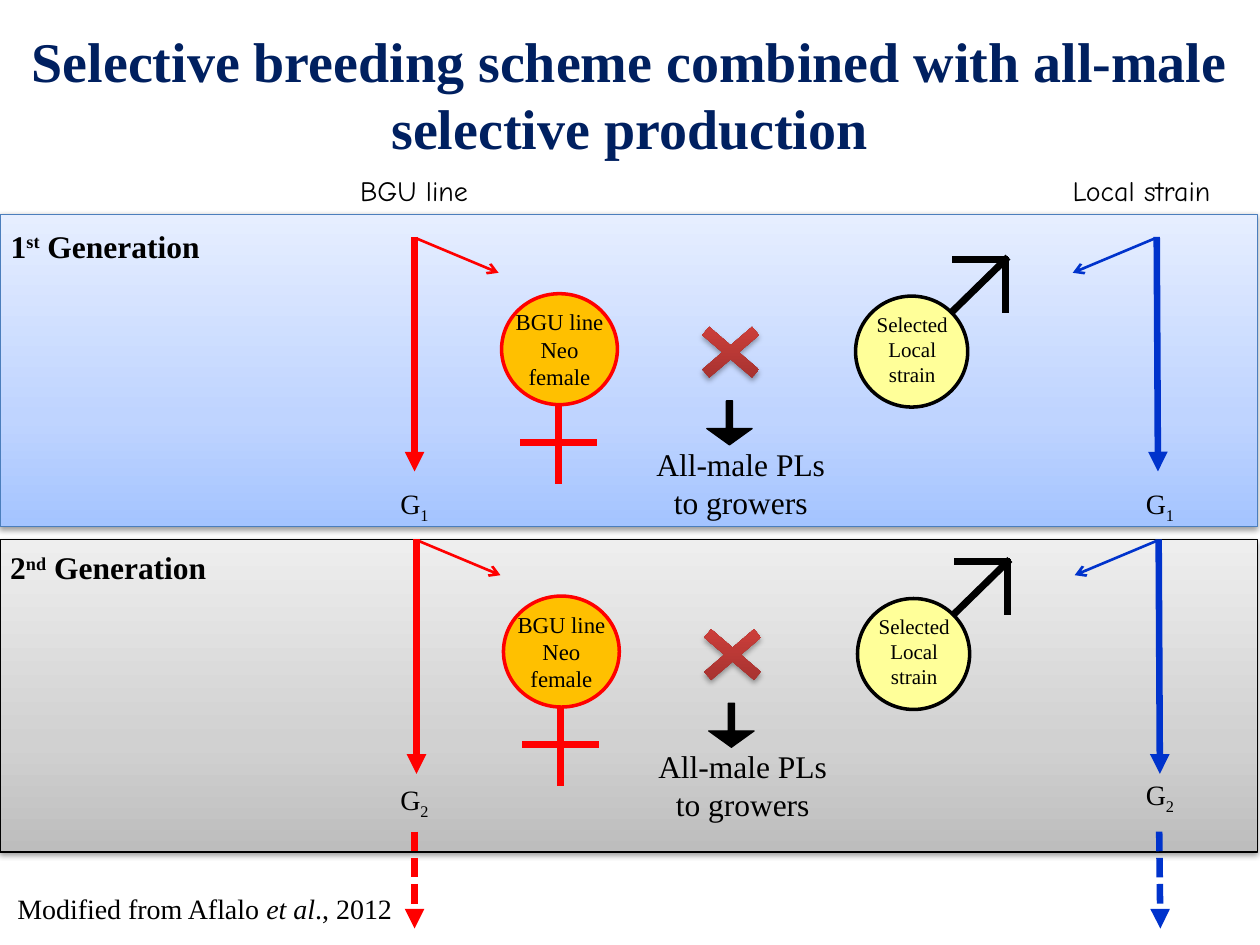
from dataclasses import dataclass
from pptx import Presentation, oxml
from pptx import util as u
from pptx.dml.color import RGBColor
from pptx.enum import dml, shapes, text
from pptx.oxml import ns


@dataclass(frozen=True)
class Theme:
    navy: str = "002060"
    black: str = "000000"
    red: str = "FF0000"
    blue: str = "0033CC"
    orange: str = "FFC000"
    yellow: str = "FFFF99"
    panel_line: str = "4B7EBC"
    blue_panel: tuple = ((0, "A4C4FF"), (35, "BFD4FF"), (100, "E6EEFF"))
    grey_panel: tuple = ((0, "BDBDBD"), (35, "D1D1D1"), (100, "EEEEEE"))
    cross: tuple = ((0, "9C2F2D"), (80, "CB3E3A"), (100, "CE3B37"))
    serif: str = "Times New Roman"
    casual: str = "Comic Neue"
    title: int = 32
    heading: int = 18
    body: int = 16
    female: int = 13
    male: int = 12
    thin: float = 0.75
    branch: float = 1.5
    outline: float = 2
    arrow: float = 3.75
    symbol: float = 4


THEME = Theme()
SHAPE = shapes.MSO_SHAPE


def points(values):
    return [u.Pt(value) for value in values]


def write(frame, lines, size, font=THEME.serif, color=THEME.black, bold=False):
    """Fill a frame with lines; a line is a string or a list of (text, style) runs."""
    for index, line in enumerate(lines):
        paragraph = frame.add_paragraph() if index else frame.paragraphs[0]
        paragraph.alignment = text.PP_ALIGN.CENTER
        for content, style in [(line, None)] if isinstance(line, str) else line:
            run = paragraph.add_run()
            run.text = content
            run.font.size, run.font.name, run.font.bold = u.Pt(size), font, bold
            run.font.color.rgb = RGBColor.from_string(color)
            if style == "italic":
                run.font.italic = True
            elif style:
                run.font._element.set("baseline", str(style * 1000))


def add_text(parent, box, lines, size=THEME.body, wrap=False, **format):
    frame = parent.add_textbox(*points(box)).text_frame
    frame.word_wrap = wrap
    write(frame, lines, size, **format)


def add_shape(parent, kind, box, fill, line=None, width=THEME.thin, shadow=None, adjustments=()):
    """Add a preset shape; fill is one colour or a tuple of gradient stops."""
    shape = parent.add_shape(kind, *points(box))
    for index, value in enumerate(adjustments):
        shape.adjustments[index] = value
    if isinstance(fill, str):
        shape.fill.solid()
        shape.fill.fore_color.rgb = RGBColor.from_string(fill)
    else:
        shape.fill.gradient()
        shape.fill.gradient_angle = 90
        stops = shape._element.spPr.find(".//" + ns.qn("a:gsLst"))
        stops.clear()
        for position, color in fill:
            stops.append(oxml.parse_xml(
                f'<a:gs {ns.nsdecls("a")} pos="{position * 1000}"><a:srgbClr val="{color}"/></a:gs>'))
    if line:
        shape.line.color.rgb = RGBColor.from_string(line)
        shape.line.width = u.Pt(width)
    else:
        shape.line.fill.background()
    shape.shadow.inherit = False
    if shadow:
        distance, opacity = shadow
        shape._element.spPr.find(ns.qn("a:effectLst")).append(oxml.parse_xml(
            f'<a:outerShdw {ns.nsdecls("a")} blurRad="{u.Pt(3.1)}" dist="{u.Pt(distance)}" '
            f'dir="5400000" rotWithShape="0"><a:srgbClr val="{THEME.black}">'
            f'<a:alpha val="{opacity * 1000}"/></a:srgbClr></a:outerShdw>'))
    return shape


def add_line(parent, start, end, color, width, head=None, dashed=False):
    connector = parent.add_connector(shapes.MSO_CONNECTOR.STRAIGHT, *points(start + end))
    connector.line.color.rgb = RGBColor.from_string(color)
    connector.line.width = u.Pt(width)
    if dashed:
        connector.line.dash_style = dml.MSO_LINE.SQUARE_DOT
    if head:
        oxml.parse_xml  # arrowhead follows the dash in the line properties
        connector.line._ln.append(oxml.parse_xml(f'<a:tailEnd {ns.nsdecls("a")} type="{head}"/>'))
    connector._element.spPr.append(oxml.parse_xml(f'<a:effectLst {ns.nsdecls("a")}/>'))


def female_symbol(slide, left, top):
    parts = slide.shapes.add_group_shape().shapes
    circle = add_shape(parts, SHAPE.OVAL, (left, top, 66.2, 63.4), THEME.orange, THEME.red, THEME.outline)
    circle.text_frame.word_wrap = False
    circle.text_frame.vertical_anchor = text.MSO_ANCHOR.MIDDLE
    write(circle.text_frame, ["BGU line", "Neo", "female"], THEME.female)
    for start, end in (((32.4, 64), (32.4, 108.7)), ((10.8, 85), (54.7, 85))):
        add_line(parts, (left + start[0], top + start[1]), (left + end[0], top + end[1]),
                 THEME.red, THEME.symbol)


def male_symbol(slide, left, top):
    parts = slide.shapes.add_group_shape().shapes
    add_shape(parts, SHAPE.OVAL, (left, top, 64.1, 63.4), THEME.yellow, THEME.black, THEME.outline)
    for start, end in (((54.7, 9.4), (87.1, -22.3)), ((85.7, -22.3), (85.7, 9.4)),
                       ((87.1, -20.9), (55.4, -20.9))):
        add_line(parts, (left + start[0], top + start[1]), (left + end[0], top + end[1]),
                 THEME.black, THEME.symbol)
    add_text(parts, (left - 2.9, top + 5, 70.6, 51.1), ["Selected", "Local strain"], THEME.male, wrap=True)


def cross_scheme(slide, left, top):
    """Draw both parent lines, their cross and its offspring."""
    parts = slide.shapes
    # Parent lines with their side branches
    for x, drift, side, color in ((236.9, 0, 1, THEME.red), (661, 0.7, -1, THEME.blue)):
        add_line(parts, (left + x, top), (left + x + drift, top + 134), color, THEME.arrow, "triangle")
        add_line(parts, (left + x + side * 1.4, top + 1), (left + x + side * 48, top + 20.5),
                 color, THEME.branch, "arrow")
    # Selected parents
    female_symbol(slide, left + 286.6, top + 32.4)
    male_symbol(slide, left + 488.9, top + 33.8)
    # Cross and offspring
    add_shape(parts, SHAPE.MATH_MULTIPLY, (left + 390.2, top + 42.5, 54.7, 46.8), THEME.cross,
              shadow=(1.8, 35), adjustments=(0.131,))
    add_shape(parts, SHAPE.DOWN_ARROW, (left + 403.9, top + 93.6, 25.9, 25.2), THEME.black,
              THEME.black, adjustments=(0.134, 0.369))
    add_text(parts, (left + 365, top + 115.2, 116.6, 51.1), ["All-male PLs", "to growers"], THEME.heading)


def generation(slide, top, fill, line, number, suffix, heading_box, scheme_at, label_tops):
    """Draw one generation: panel, heading, scheme and G labels."""
    add_shape(slide.shapes, SHAPE.RECTANGLE, (0, top, 718.6, 178.6), fill, line, shadow=(1.6, 38))
    add_text(slide.shapes, heading_box, [[(number, None), (suffix, 30), (" Generation", None)]],
             THEME.heading, bold=True)
    cross_scheme(slide, *scheme_at)
    for left, label_top in zip((221, 647), label_tops):
        add_text(slide.shapes, (left, label_top, 31.7, 26.6), [[("G", None), (number, -25)]])


def title_region(slide, box):
    title = slide.shapes.title
    title.left, title.top, title.width, title.height = points(box)
    title.text_frame.word_wrap = True
    title.text_frame.vertical_anchor = text.MSO_ANCHOR.MIDDLE
    write(title.text_frame, ["Selective breeding scheme combined with all-male selective production"],
          THEME.title, color=THEME.navy, bold=True)


def main():
    presentation = Presentation()
    presentation.slide_width, presentation.slide_height = points((720, 540))
    slide = presentation.slides.add_slide(presentation.slide_layouts[5])
    title_region(slide, (1.4, 2.9, 717.1, 101.5))
    # Names of the two lines
    for box, name in (((197.3, 95.8, 78.5, 26.6), "BGU line"), ((601.2, 95.8, 102.2, 26.6), "Local strain")):
        add_text(slide.shapes, box, [name], font=THEME.casual)
    # Generations
    generation(slide, 308.2, THEME.grey_panel, THEME.black, "2", "nd",
               (-3.6, 309.6, 131, 28.8), (1.1, 308.2), (443.5, 440.6))
    generation(slide, 122.4, THEME.blue_panel, THEME.panel_line, "1", "st",
               (-2.9, 126, 126, 28.8), (0, 135.4), (274.3, 274.3))
    # Generations to come
    for x, drift, color in ((236.9, 0, THEME.red), (662.4, 0.7, THEME.blue)):
        add_line(slide.shapes, (x, 475.2), (x + drift, 530.6), color, THEME.arrow, "triangle", dashed=True)
    # Source
    add_text(slide.shapes, (1.4, 506.2, 231.1, 26.6),
             [[("Modified from Aflalo ", None), ("et al", "italic"), ("., 2012", None)]])
    presentation.save("out.pptx")


if __name__ == "__main__":
    main()
